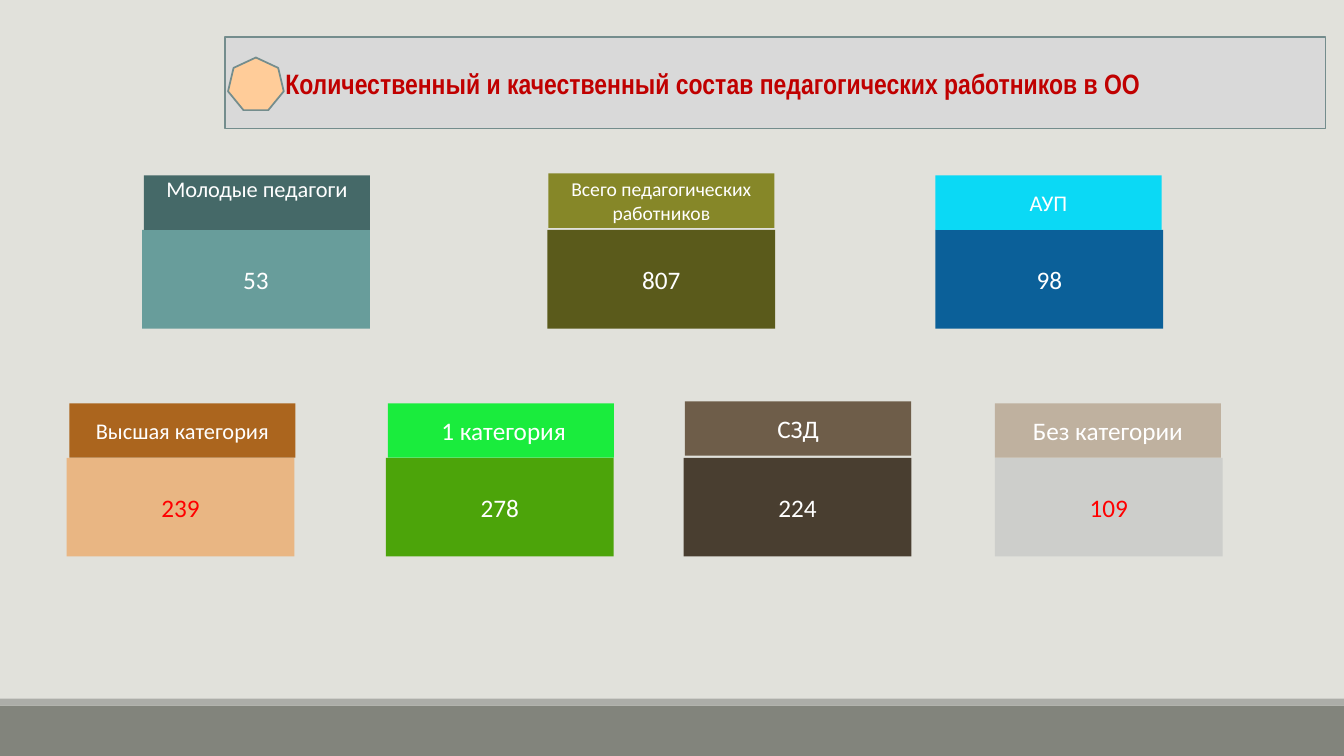
"""Build a slide of number cards on the teaching staff."""
from lxml import etree
from pptx import Presentation
from pptx.dml.color import RGBColor
from pptx.enum.shapes import MSO_SHAPE
from pptx.enum.text import MSO_ANCHOR, MSO_AUTO_SIZE, PP_ALIGN
from pptx.oxml.ns import qn
from pptx.util import Pt

RECTANGLE, HEPTAGON = MSO_SHAPE.RECTANGLE, MSO_SHAPE.HEPTAGON
TOP, MIDDLE = MSO_ANCHOR.TOP, MSO_ANCHOR.MIDDLE
CENTER, JUSTIFY = PP_ALIGN.CENTER, PP_ALIGN.JUSTIFY
WHITE, RED, OUTLINE = "FFFFFF", "FF0000", "748D8D"
SLIDE_WIDTH, SLIDE_HEIGHT = 960, 540
TITLE = "Количественный и качественный состав педагогических работников в ОО"
BANDS = [(504, 36, "82847C"), (499, 5, "ACADA8")]

# Caption, size, fill; value, colour, fill; left, caption shift right and up
ROWS = [
    (164.2, [
        ("Молодые педагоги", 16, "456968", "53", WHITE, "689D9B", 101.5, 1.3, 0),
        ("Всего педагогических работников", 14, "868728", "807", WHITE, "5A5A1B", 391, 0.7, 1.4),
        ("АУП", 16, "0BD9F5", "98", WHITE, "0B6099", 668.2, 0, 0),
    ]),
    (327, [
        ("Высшая категория", 16, "AB651E", "239", RED, "E9B683", 47.7, 1.8, 0),
        (" 1 категория", 18, "1AEC3D", "278", WHITE, "4CA40A", 275.7, 1.3, 0),
        ("СЗД", 18, "6E5D49", "224", WHITE, "493E30", 488.3, 1, 1.4),
        ("Без категории", 18, "BFB19F", "109", RED, "CDCECB", 710.6, 0, 0),
    ]),
]
VALUE_WIDTH, VALUE_HEIGHT = 162.7, 70.5
CAPTION_WIDTH, CAPTION_HEIGHT = 161.5, 38.9


def color(value):
    return RGBColor.from_string(value)


def paint(shape, fill, line=None):
    shape.fill.solid()
    shape.fill.fore_color.rgb = color(fill)
    if line:
        shape.line.color.rgb = color(line)
        shape.line.width = Pt(1.25)
    else:
        shape.line.fill.background()


def add_shape(slide, kind, left, top, width, height, fill, line=None):
    shape = slide.shapes.add_shape(kind, Pt(left), Pt(top), Pt(width), Pt(height))
    shape.shadow.inherit = False
    paint(shape, fill, line)
    return shape


def write(shape, text, size, font_color, font_name="Calibri", alignment=CENTER, bold=False):
    frame = shape.text_frame
    frame.text = text
    frame.word_wrap = True
    frame.auto_size = MSO_AUTO_SIZE.NONE
    frame.vertical_anchor = MIDDLE
    paragraph = frame.paragraphs[0]
    paragraph.alignment = alignment
    font = paragraph.runs[0].font
    font.name, font.size, font.bold = font_name, Pt(size), bold
    font.color.rgb = color(font_color)


def add_title(slide):
    title = slide.shapes.title
    title.left, title.top, title.width, title.height = Pt(160.6), Pt(26.6), Pt(786.2), Pt(65.3)
    geometry = etree.SubElement(title.element.spPr, qn("a:prstGeom"), prst="roundRect")
    etree.SubElement(geometry, qn("a:avLst"))
    paint(title, "D9D9D9", OUTLINE)
    write(title, TITLE, 20, "C00000", "Arial Narrow", JUSTIFY, True)
    title.text_frame.margin_left = Pt(43.2)
    add_shape(slide, HEPTAGON, 162.9, 41.1, 39.8, 37.6, "FFCC99", OUTLINE)


def add_card(slide, top, card):
    caption, size, caption_fill, value, value_color, value_fill, left, right_shift, up_shift = card
    value_box = add_shape(slide, RECTANGLE, left, top, VALUE_WIDTH, VALUE_HEIGHT, value_fill)
    write(value_box, value, 18, value_color)
    caption_box = add_shape(slide, RECTANGLE, left + right_shift, top - CAPTION_HEIGHT - up_shift,
                            CAPTION_WIDTH, CAPTION_HEIGHT, caption_fill)
    write(caption_box, caption, size, WHITE)
    return caption_box


def main():
    presentation = Presentation()
    presentation.slide_width, presentation.slide_height = Pt(SLIDE_WIDTH), Pt(SLIDE_HEIGHT)
    slide = presentation.slides.add_slide(presentation.slide_layouts[5])
    slide.background.fill.solid()
    slide.background.fill.fore_color.rgb = color("E1E1DB")
    for top, height, fill in BANDS:
        add_shape(slide, RECTANGLE, 0, top, SLIDE_WIDTH, height, fill)
    add_title(slide)
    captions = [add_card(slide, top, card) for top, cards in ROWS for card in cards]
    young_teachers = captions[0].text_frame
    young_teachers.vertical_anchor = TOP
    young_teachers.margin_top = 0
    presentation.save("out.pptx")


if __name__ == "__main__":
    main()
